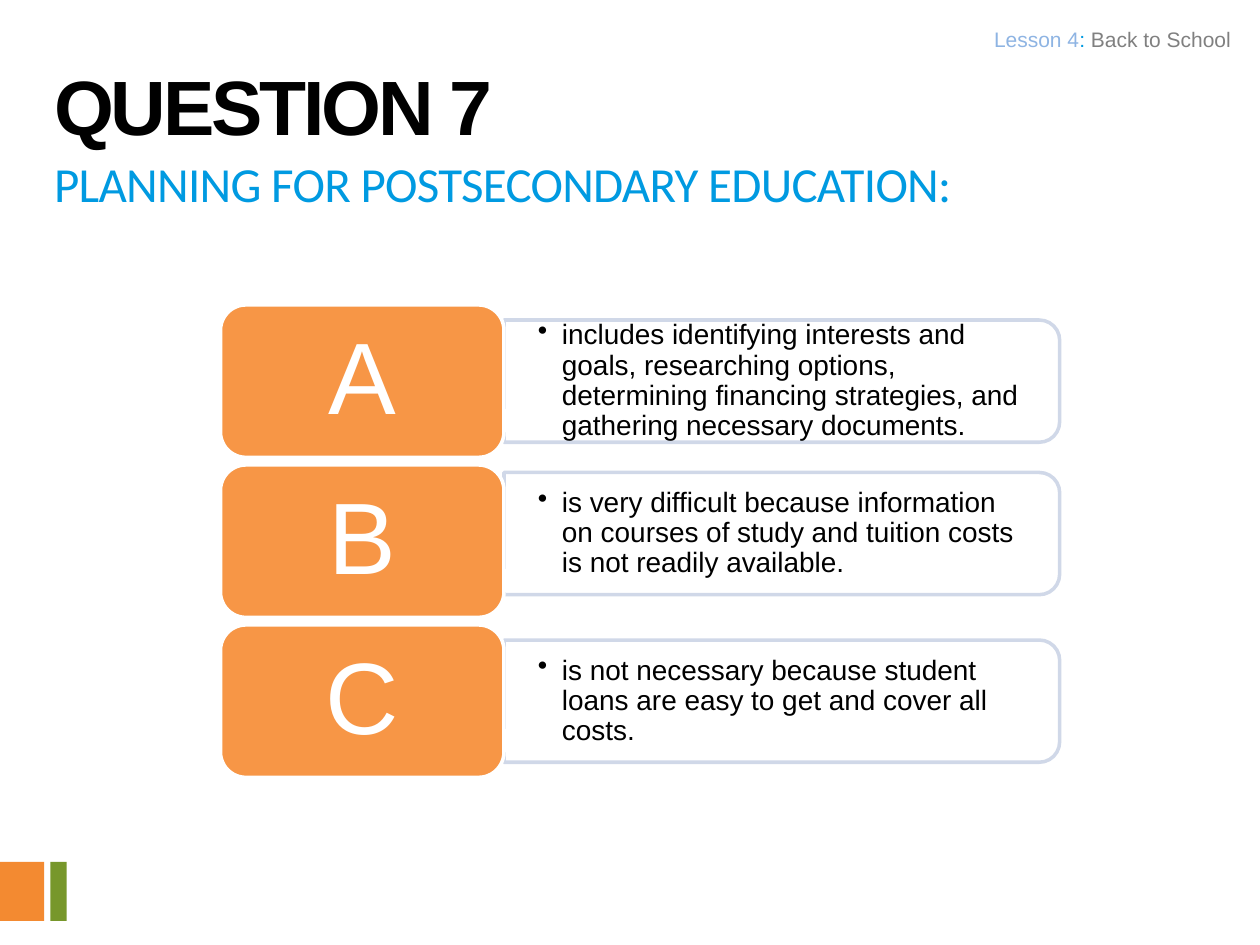
from dataclasses import dataclass

from lxml.etree import SubElement
from pptx import Presentation
from pptx.dml.color import RGBColor as RGB
from pptx.enum.shapes import MSO_SHAPE as Shape
from pptx.enum.text import MSO_ANCHOR as Anchor, MSO_AUTO_SIZE as AutoSize, PP_ALIGN as Align
from pptx.oxml.ns import qn
from pptx.util import Pt


@dataclass(frozen=True)
class Theme:
    """Colours, fonts and type sizes of the slide."""
    black: RGB = RGB(0x00, 0x00, 0x00)
    white: RGB = RGB(0xFF, 0xFF, 0xFF)
    blue: RGB = RGB(0x00, 0x9A, 0xE1)
    pale_blue: RGB = RGB(0x8E, 0xB4, 0xE3)
    grey: RGB = RGB(0x80, 0x80, 0x80)
    card: RGB = RGB(0xF7, 0x96, 0x46)
    panel_edge: RGB = RGB(0xD0, 0xD8, 0xE8)
    orange: RGB = RGB(0xF3, 0x8A, 0x31)
    green: RGB = RGB(0x77, 0x97, 0x2B)
    sans: str = "Arial"
    accent: str = "Calibri"
    title: int = 44
    subtitle: int = 28
    letter: int = 58
    answer: int = 16
    lesson: int = 12


THEME = Theme()
ANSWERS = [
    ("A", "includes identifying interests and goals, researching options, "
          "determining financing strategies, and gathering necessary documents.", 0),
    ("B", "is very difficult because information on courses of study and "
          "tuition costs is not readily available.", -4.32),
    ("C", "is not necessary because student loans are easy to get and cover all costs.", 0),
]


def style(font, face, size, color=None, bold=False):
    """Set face, size, weight and colour of a font."""
    font.name, font.size, font.bold = face, Pt(size), bold
    if color is not None:
        font.color.rgb = color


def set_frame(frame, anchor, inset_x, inset_y):
    """Wrap a text frame and set its anchor and insets."""
    frame.word_wrap = True
    frame.auto_size = AutoSize.NONE
    frame.vertical_anchor = anchor
    frame.margin_left = frame.margin_right = Pt(inset_x)
    frame.margin_top = frame.margin_bottom = Pt(inset_y)


def set_bullet(paragraph, char, indent):
    """Give a paragraph a hanging bullet, or none when char is empty."""
    props = paragraph._p.get_or_add_pPr()
    props.set("marL", str(Pt(indent)))
    props.set("indent", str(-Pt(indent)))
    if char:
        SubElement(props, qn("a:buChar")).set("char", char)
    else:
        SubElement(props, qn("a:buNone"))


def add_block(slide, preset, box, fill, edge=None):
    """Add a flat filled shape with an optional two-point edge."""
    block = slide.shapes.add_shape(preset, *map(Pt, box))
    block.shadow.inherit = False
    block.fill.solid()
    block.fill.fore_color.rgb = fill
    if edge is None:
        block.line.fill.background()
    else:
        block.line.color.rgb = edge
        block.line.width = Pt(2)
    return block


def fill_heading(heading, box, text, face, size, color, bold, tracking):
    """Place a heading placeholder and fill it with one tracked line."""
    heading.left, heading.top, heading.width, heading.height = map(Pt, box)
    frame = heading.text_frame
    set_frame(frame, Anchor.TOP, 7.2, 3.6)
    line = frame.paragraphs[0]
    set_bullet(line, "", 0)
    line.alignment = Align.LEFT
    line.space_before = Pt(0)
    run = line.add_run()
    run.text = text
    run._r.get_or_add_rPr().set("spc", str(tracking))
    style(line.font, face, size, color, bold)
    return line


def add_lesson(slide, box):
    """Add the right-aligned lesson label."""
    frame = slide.shapes.add_textbox(*map(Pt, box)).text_frame
    set_frame(frame, Anchor.TOP, 5.76, 2.88)
    label = frame.paragraphs[0]
    label.alignment = Align.RIGHT
    style(label.font, THEME.sans, THEME.lesson)
    for text, color in (("Lesson 4", THEME.pale_blue), (": ", THEME.blue),
                        ("Back to School", THEME.grey)):
        run = label.add_run()
        run.text = text
        run.font.color.rgb = color


def add_answer(slide, box, letter, answer, panel_shift):
    """Add a letter card with its answer panel to the right."""
    left, top, width, height = box
    card_width, panel_height, text_height = 162, 69.84, 62.64
    panel_left, panel_width = left + card_width, width - card_width
    middle = top + height / 2 + panel_shift

    upright = (panel_left + (panel_width - panel_height) / 2,
               middle - panel_width / 2, panel_height, panel_width)
    panel = add_block(slide, Shape.ROUND_2_SAME_RECTANGLE, upright,
                      THEME.white, THEME.panel_edge)
    panel.rotation = 90

    text_box = (panel_left, middle - text_height / 2, panel_width - 2.88, text_height)
    frame = slide.shapes.add_textbox(*map(Pt, text_box)).text_frame
    set_frame(frame, Anchor.MIDDLE, 19.44, 10.08)
    choice = frame.paragraphs[0]
    choice.text = answer
    choice.level = 1
    set_bullet(choice, "•", 13.68)
    choice.line_spacing = 0.9
    style(choice.font, THEME.sans, THEME.answer, THEME.black)

    card = add_block(slide, Shape.ROUNDED_RECTANGLE, (left, top, card_width, height),
                     THEME.card, THEME.white)
    set_frame(card.text_frame, Anchor.MIDDLE, 21.6, 12.96)
    mark = card.text_frame.paragraphs[0]
    mark.text = letter
    mark.alignment = Align.CENTER
    mark.line_spacing = 0.9
    style(mark.font, THEME.sans, THEME.letter, THEME.white)


def add_answers(slide, box):
    """Stack the answers evenly in the box."""
    left, top, width, height = box
    row_height = 87.12
    pitch = (height - row_height) / (len(ANSWERS) - 1)
    for row, (letter, answer, shift) in enumerate(ANSWERS):
        add_answer(slide, (left, top + row * pitch, width, row_height),
                   letter, answer, shift)


def add_corner_bars(slide, box):
    """Add the orange and green bars at the ends of the box."""
    left, top, width, height = box
    green_width = 9.36
    add_block(slide, Shape.RECTANGLE, (left, top, 25.2, height), THEME.orange)
    add_block(slide, Shape.RECTANGLE,
              (left + width - green_width, top, green_width, height), THEME.green)


def main():
    """Build and save the question slide."""
    deck = Presentation()
    deck.slide_width, deck.slide_height = Pt(720), Pt(540)
    slide = deck.slides.add_slide(deck.slide_layouts[1])
    add_corner_bars(slide, (0, 492.48, 38.16, 33.84))
    title = fill_heading(slide.shapes.title, (23.76, 23.76, 623.52, 59.76), "QUESTION 7",
                         THEME.sans, THEME.title, THEME.black, True, -180)
    title.line_spacing = Pt(59)
    fill_heading(slide.placeholders[1], (23.76, 84.24, 684, 108),
                 "PLANNING FOR POSTSECONDARY EDUCATION:",
                 THEME.accent, THEME.subtitle, THEME.blue, False, -40)
    add_answers(slide, (126, 174.24, 479.52, 270))
    add_lesson(slide, (288, 12.24, 421.2, 23.04))
    deck.save("out.pptx")


if __name__ == "__main__":
    main()
